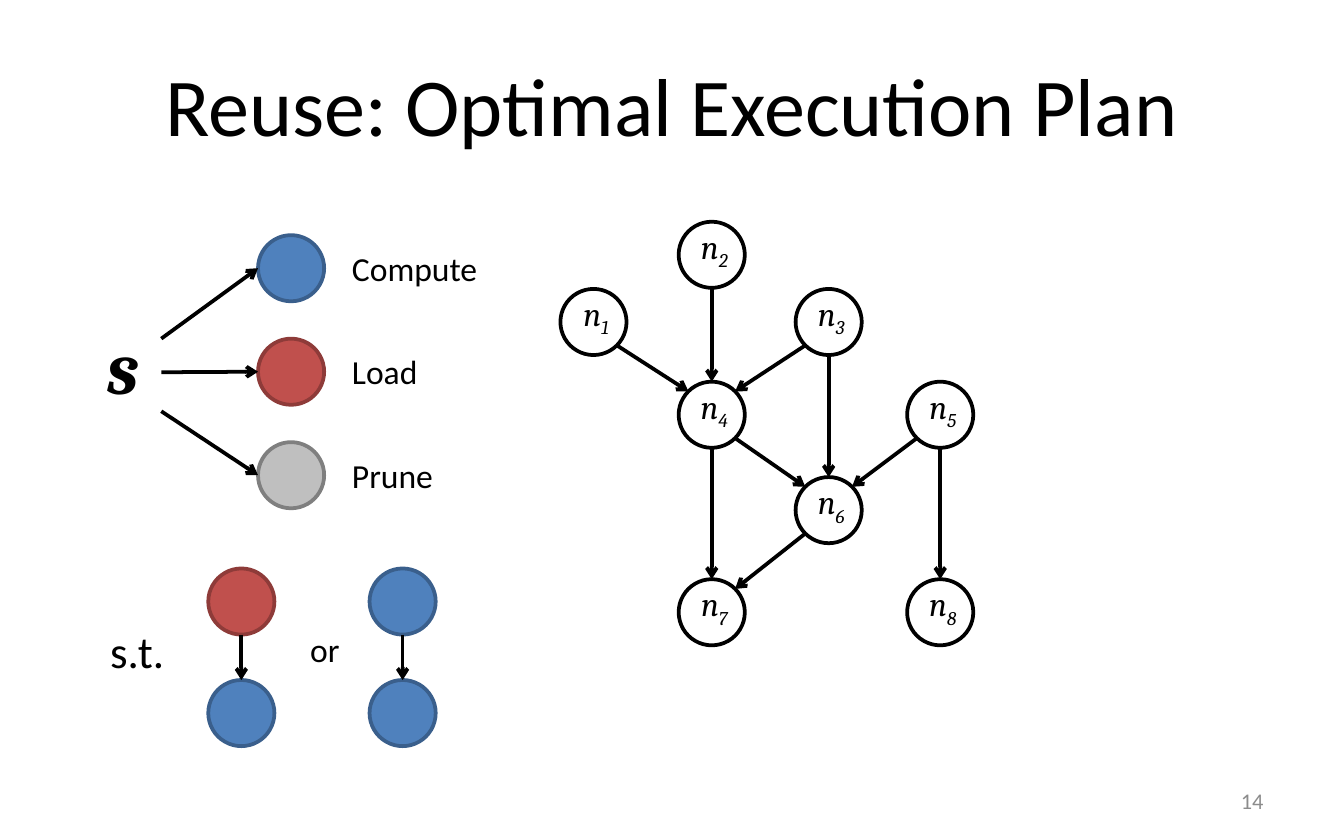
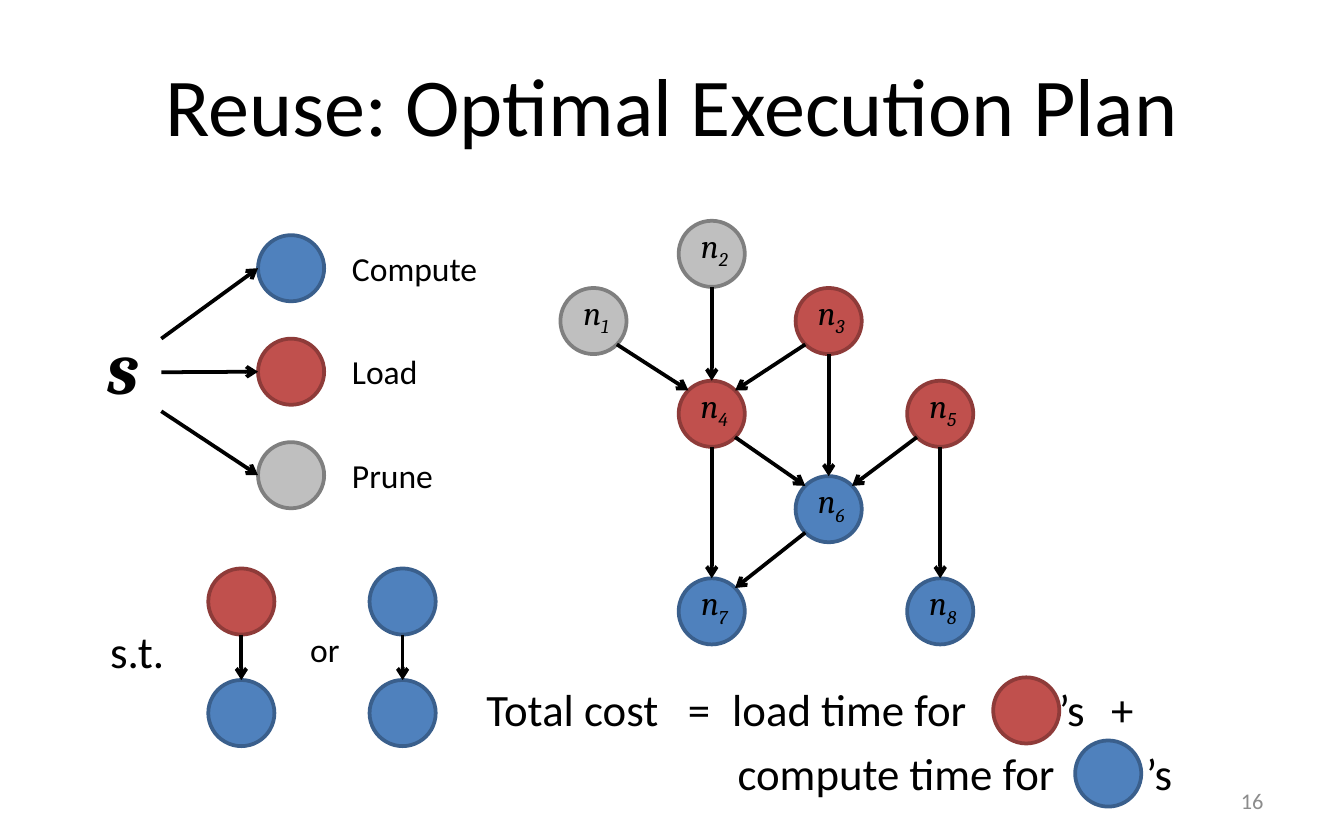
from math import sqrt

from lxml import etree
from pptx import Presentation
from pptx.dml.color import RGBColor
from pptx.enum.shapes import MSO_CONNECTOR, MSO_SHAPE
from pptx.enum.text import MSO_ANCHOR, PP_ALIGN
from pptx.oxml.ns import qn
from pptx.util import Inches, Pt

LEFT, CENTER, RIGHT = PP_ALIGN.LEFT, PP_ALIGN.CENTER, PP_ALIGN.RIGHT
TOP, MIDDLE = MSO_ANCHOR.TOP, MSO_ANCHOR.MIDDLE
ELLIPSE, STRAIGHT = MSO_SHAPE.OVAL, MSO_CONNECTOR.STRAIGHT

BLACK = RGBColor(0x00, 0x00, 0x00)
WHITE = RGBColor(0xFF, 0xFF, 0xFF)
NUMBER_GRAY = RGBColor(0x8C, 0x8C, 0x8C)
PLAIN = (WHITE, BLACK)
COMPUTE = (RGBColor(0x4F, 0x81, 0xBD), RGBColor(0x3A, 0x5F, 0x8C))
LOAD = (RGBColor(0xC0, 0x50, 0x4D), RGBColor(0x8E, 0x3B, 0x39))
PRUNE = (RGBColor(0xBF, 0xBF, 0xBF), RGBColor(0x7F, 0x7F, 0x7F))

WIDTH, HEIGHT, COLUMNS = 10, 6.25, 100
DIAMETER = 4.92
DIAGONAL = 1 / sqrt(2)
SITES = {
    "top": (0, -1),
    "bottom": (0, 1),
    "left": (-1, 0),
    "top left": (-DIAGONAL, -DIAGONAL),
    "top right": (DIAGONAL, -DIAGONAL),
    "bottom left": (-DIAGONAL, DIAGONAL),
    "bottom right": (DIAGONAL, DIAGONAL),
}

NODES = {
    2: (50.5, 16.5),
    1: (41.7, 21.5),
    3: (59.2, 21.5),
    4: (50.5, 28.4),
    7: (50.5, 43.1),
    6: (59.2, 35.5),
    5: (67.5, 28.4),
    8: (67.5, 43.1),
}
EDGES = [
    (1, "bottom right", 4, "top left"),
    (2, "bottom", 4, "top"),
    (3, "bottom left", 4, "top right"),
    (4, "bottom", 7, "top"),
    (4, "bottom right", 6, "top left"),
    (5, "bottom left", 6, "top right"),
    (6, "bottom left", 7, "top right"),
    (5, "bottom", 8, "top"),
    (3, "bottom", 6, "top"),
]
PLAN = {1: PRUNE, 2: PRUNE, 3: LOAD, 4: LOAD, 5: LOAD, 6: COMPUTE, 7: COMPUTE, 8: COMPUTE}
STATES = [("Compute", COMPUTE, 11.5, 25.2), ("Load", LOAD, 6.9, 27.7), ("Prune", PRUNE, 8.1, 30.6)]
COST_LINES = [
    ("Total cost\t=\tload time for\t’s\t+", (15, 18.3, 42.6, 46.5)),
    ("\tcompute time for\t’s", (18.7, 49.1)),
]


def columns(count):
    return Inches(count * WIDTH / COLUMNS)


def site(corner, name):
    radius = DIAMETER / 2
    return tuple(start + radius * (1 + step) for start, step in zip(corner, SITES[name]))


class Deck:
    def __init__(self):
        self.presentation = Presentation()
        self.presentation.slide_width = Inches(WIDTH)
        self.presentation.slide_height = Inches(HEIGHT)
        self.slide = None

    def new_slide(self, title, number):
        self.slide = self.presentation.slides.add_slide(self.presentation.slide_layouts[6])
        self.text((5, 2.5, 90, 10.4), title, 44, align=CENTER, anchor=MIDDLE)
        self.text((71.7, 57.9, 23.3, 3.3), number, 12, NUMBER_GRAY, align=RIGHT, anchor=MIDDLE)

    def frame(self, box, anchor=TOP, wrap=True):
        frame = self.slide.shapes.add_textbox(*map(columns, box)).text_frame
        frame.word_wrap = wrap
        frame.vertical_anchor = anchor
        return frame

    def run(self, paragraph, words, size, color=BLACK, name="Calibri", italic=False, bold=False):
        run = paragraph.add_run()
        run.text = words
        run.font.name = name
        run.font.size = Pt(size)
        run.font.color.rgb = color
        run.font.italic = italic
        run.font.bold = bold
        return run

    def text(self, box, words, size, color=BLACK, align=LEFT, anchor=TOP, wrap=True):
        paragraph = self.frame(box, anchor, wrap).paragraphs[0]
        paragraph.alignment = align
        self.run(paragraph, words, size, color)

    def symbol(self, box, letter, size, subscript="", bold=False):
        paragraph = self.frame(box, MIDDLE, wrap=False).paragraphs[0]
        paragraph.alignment = CENTER
        self.run(paragraph, letter, size, name="Cambria", italic=True, bold=bold)
        if subscript:
            lowered = self.run(paragraph, subscript, size, name="Cambria", italic=True)
            lowered.font._element.set("baseline", "-25000")

    def tabbed_lines(self, box, lines, size):
        frame = self.frame(box)
        for index, (words, stops) in enumerate(lines):
            paragraph = frame.add_paragraph() if index else frame.paragraphs[0]
            tabs = etree.SubElement(paragraph._p.get_or_add_pPr(), qn("a:tabLst"))
            for stop in stops:
                etree.SubElement(tabs, qn("a:tab"), pos=str(columns(stop)), algn="l")
            paragraph.line_spacing = 1.2
            self.run(paragraph, words, size)

    def circle(self, corner, style):
        shape = self.slide.shapes.add_shape(ELLIPSE, *map(columns, (*corner, DIAMETER, DIAMETER)))
        shape.shadow.inherit = False
        shape.fill.solid()
        shape.fill.fore_color.rgb, shape.line.color.rgb = style
        shape.line.width = Pt(2)

    def arrow(self, start, end):
        connector = self.slide.shapes.add_connector(STRAIGHT, *map(columns, (*start, *end)))
        connector.line.color.rgb = BLACK
        connector.line.width = Pt(2)
        properties = connector._element.spPr
        etree.SubElement(properties.find(qn("a:ln")), qn("a:tailEnd"), type="arrow")
        etree.SubElement(properties, qn("a:effectLst"))


def draw_states(deck):
    deck.symbol((6.3, 23.3, 5.7, 7.7), "s", 40, bold=True)
    for row, (label, style, width, arrow_row) in enumerate(STATES):
        corner = (19.2, 17.5 + 7.7 * row)
        deck.circle(corner, style)
        deck.arrow((12, arrow_row), site(corner, "left"))
        deck.text((25.2, corner[1] + 0.45, width, 4), label, 18, wrap=False)


def draw_constraint(deck):
    deck.text((7.2, 45.9, 6.2, 5), "s.t.", 24, wrap=False)
    deck.text((22.1, 46.3, 4.2, 4), "or", 18, wrap=False)
    for left, parent_style in ((15.5, LOAD), (27.5, COMPUTE)):
        parent, child = (left, 42.3), (left, 50.6)
        deck.circle(parent, parent_style)
        deck.circle(child, COMPUTE)
        deck.arrow(site(parent, "bottom"), site(child, "top"))


def draw_graph(deck, styles, lift=0):
    corners = {node: (left, top - lift) for node, (left, top) in NODES.items()}
    for node, (left, top) in corners.items():
        deck.circle((left, top), styles.get(node, PLAIN))
        deck.symbol((left + 0.3, top, 4.7, 4), "n", 18, str(node))
    for source, leaving, target, entering in EDGES:
        deck.arrow(site(corners[source], leaving), site(corners[target], entering))


def draw_cost(deck):
    deck.tabbed_lines((35.2, 49.4, 54.7, 10.6), COST_LINES, 24)
    deck.circle((73.9, 50.4), LOAD)
    deck.circle((80, 55.1), COMPUTE)


def main():
    deck = Deck()
    for number, styles, lift in (("14", {}, 0), ("16", PLAN, 0.07)):
        deck.new_slide("Reuse: Optimal Execution Plan", number)
        draw_graph(deck, styles, lift)
        draw_states(deck)
        if styles:
            draw_cost(deck)
        draw_constraint(deck)
    deck.presentation.save("out.pptx")


if __name__ == "__main__":
    main()
